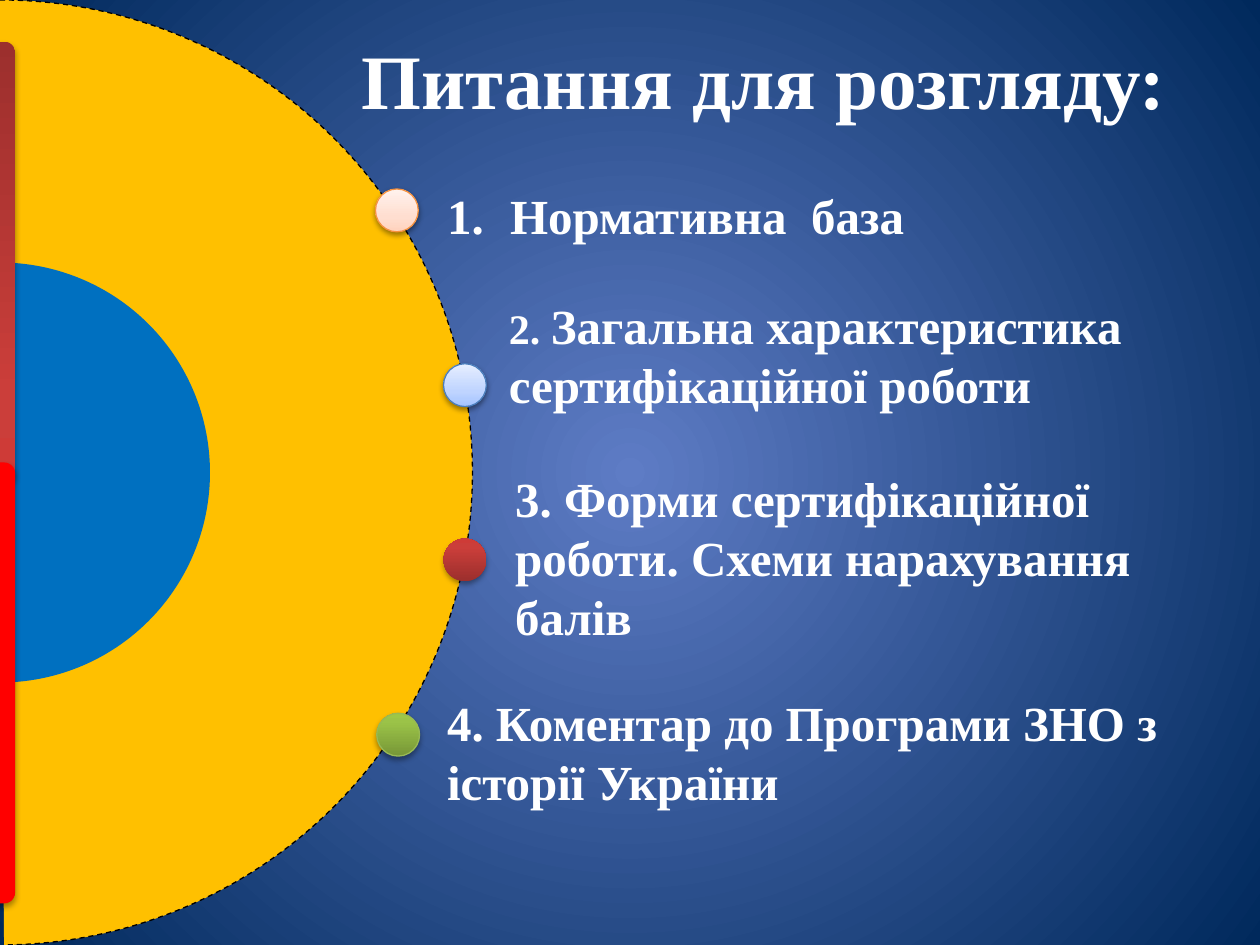
from lxml import etree
from pptx import Presentation
from pptx.dml.color import RGBColor
from pptx.enum.dml import MSO_LINE
from pptx.enum.shapes import MSO_SHAPE
from pptx.enum.text import MSO_AUTO_SIZE, PP_ALIGN
from pptx.oxml.ns import qn
from pptx.util import Inches, Pt

ARC, DOT, BAR = MSO_SHAPE.ARC, MSO_SHAPE.OVAL, MSO_SHAPE.ROUNDED_RECTANGLE
DASH = MSO_LINE.DASH
CENTER = PP_ALIGN.CENTER
GROW = MSO_AUTO_SIZE.SHAPE_TO_FIT_TEXT

# Content: each topic has its text runs (text, size name) and box left, top, width, height
TITLE = "Питання для розгляду:"
TOPICS = [
    ([("Нормативна  база", "topic")], (3.45, 1.42, 5.9, 0.57)),
    ([("2. ", "number"),
      ("Загальна характеристика сертифікаційної роботи", "topic")],
     (3.94, 2.3, 5.79, 1.04)),
    ([("3. Форми сертифікаційної роботи. Схеми нарахування балів", "topic")],
     (3.99, 3.67, 5.73, 1.51)),
    ([("4. Коментар до Програми ЗНО з історії України", "topic")],
     (3.45, 5.45, 6.1, 1.04)),
]

RED_STOPS = [(0, "9C2F2D"), (80, "CB3E3A"), (100, "CE3B37")]
THEME = {
    "font": "Times New Roman",
    "text": "FFFFFF",
    "sizes": {"title": 44, "topic": 28, "number": 24},
    "background": [(0, "5E7CC5"), (100, "00295C")],
    "outer": "FFC000",
    "inner": "0070C0",
    "edge": "000000",
    "bars": [RED_STOPS, "FF0000"],
    # Dot fill, outline, shadow opacity and shadow distance
    "dots": [
        ([(0, "FFD2BD"), (35, "FFDED0"), (100, "FFF2ED")], "F69240", 38, 1.6),
        ([(0, "A4C4FF"), (35, "BFD4FF"), (100, "E6EEFF")], "4B7EBC", 38, 1.6),
        (RED_STOPS, None, 35, 1.8),
        ([(0, "779737"), (80, "9BC348"), (100, "9DC746")], "98B955", 35, 1.8),
    ],
}

# Layout in inches
WIDTH, HEIGHT = 10, 7.5
INNER_SIZE = HEIGHT * 4 / 9
DOT_SIZE, DOT_TOP, DOT_STEP = 0.34, 1.5, 1.387
DOT_LEFTS = [2.98, 3.52, 3.52, 2.99]
BAR_WIDTH, BAR_HEIGHT, BAR_TOP, BAR_STEP = 0.25, 3.5, 0.33, 3.34


def rgb(code):
    return RGBColor.from_string(code)


def add_child(parent, tag, **attributes):
    child = etree.SubElement(parent, qn(tag))
    for name, value in attributes.items():
        child.set(name, str(value))
    return child


def set_gradient(fill, element, stops, radial=False):
    fill.gradient()
    gradient = next(element.iter(qn("a:gradFill")))
    for child in list(gradient):
        gradient.remove(child)
    stop_list = add_child(gradient, "a:gsLst")
    for position, code in stops:
        stop = add_child(stop_list, "a:gs", pos=position * 1000)
        add_child(stop, "a:srgbClr", val=code)
    if radial:
        focus = add_child(gradient, "a:path", path="circle")
        add_child(focus, "a:fillToRect", l=50000, t=50000, r=50000, b=50000)
    else:
        add_child(gradient, "a:lin", ang=270 * 60000, scaled=0)


def add_shadow(shape, opacity, distance):
    effects = shape.element.spPr.find(qn("a:effectLst"))
    shadow = add_child(effects, "a:outerShdw", blurRad=Pt(3.1), dist=Pt(distance),
                       dir=90 * 60000, rotWithShape=0)
    color = add_child(shadow, "a:srgbClr", val=THEME["edge"])
    add_child(color, "a:alpha", val=opacity * 1000)


def add_figure(page, kind, area, fill, line=None):
    shape = page.shapes.add_shape(kind, *map(Inches, area))
    shape.shadow.inherit = False
    if isinstance(fill, str):
        shape.fill.solid()
        shape.fill.fore_color.rgb = rgb(fill)
    else:
        set_gradient(shape.fill, shape.element, fill)
    if line:
        shape.line.color.rgb = rgb(line)
        shape.line.width = Pt(0.75)
    else:
        shape.line.fill.background()
    return shape


def add_half_disc(page, size, fill, line=None):
    area = (-size / 2, (HEIGHT - size) / 2, size, size)
    disc = add_figure(page, ARC, area, fill, line)
    disc.adjustments[0], disc.adjustments[1] = 162, 53.7
    return disc


def add_text(page, runs, area):
    box = page.shapes.add_textbox(*map(Inches, area))
    frame = box.text_frame
    frame.word_wrap = True
    frame.auto_size = GROW
    para = frame.paragraphs[0]
    para.font.name = THEME["font"]
    para.font.bold = True
    para.font.color.rgb = rgb(THEME["text"])
    for text, size in runs:
        span = para.add_run()
        span.text = text
        span.font.size = Pt(THEME["sizes"][size])
    return frame


def main():
    deck = Presentation()
    deck.slide_width, deck.slide_height = Inches(WIDTH), Inches(HEIGHT)
    page = deck.slides.add_slide(deck.slide_layouts[6])
    set_gradient(page.background.fill, page.element, THEME["background"], radial=True)

    # Outer half disc with a dashed edge
    outer = add_half_disc(page, HEIGHT, THEME["outer"], THEME["edge"])
    outer.line.dash_style = DASH

    # Topics; the first is an automatically numbered item
    frames = [add_text(page, runs, area) for runs, area in TOPICS]
    numbering = frames[0].paragraphs[0]._p.get_or_add_pPr()
    numbering.set("marL", str(Inches(0.5)))
    numbering.set("indent", str(-Inches(0.5)))
    bullet = etree.Element(qn("a:buAutoNum"), type="arabicPeriod")
    numbering.insert(0, bullet)

    # Dots along the edge
    for row, (left, style) in enumerate(zip(DOT_LEFTS, THEME["dots"])):
        fill, line, opacity, distance = style
        area = (left, DOT_TOP + row * DOT_STEP, DOT_SIZE, DOT_SIZE)
        add_shadow(add_figure(page, DOT, area, fill, line), opacity, distance)

    # Inner half disc and the bars at the left edge
    add_half_disc(page, INNER_SIZE, THEME["inner"])
    for row, fill in enumerate(THEME["bars"]):
        area = (-0.13, BAR_TOP + row * BAR_STEP, BAR_WIDTH, BAR_HEIGHT)
        bar = add_figure(page, BAR, area, fill)
        bar.adjustments[0] = 0.35
        bar.rotation = 180
        add_shadow(bar, 35, 1.8)

    # Title
    heading = add_text(page, [(TITLE, "title")], (2.8, 0.26, 6.53, 0.74))
    heading.margin_left = heading.margin_right = 0
    heading.margin_top = heading.margin_bottom = 0
    heading.paragraphs[0].alignment = CENTER

    deck.save("out.pptx")


if __name__ == "__main__":
    main()
